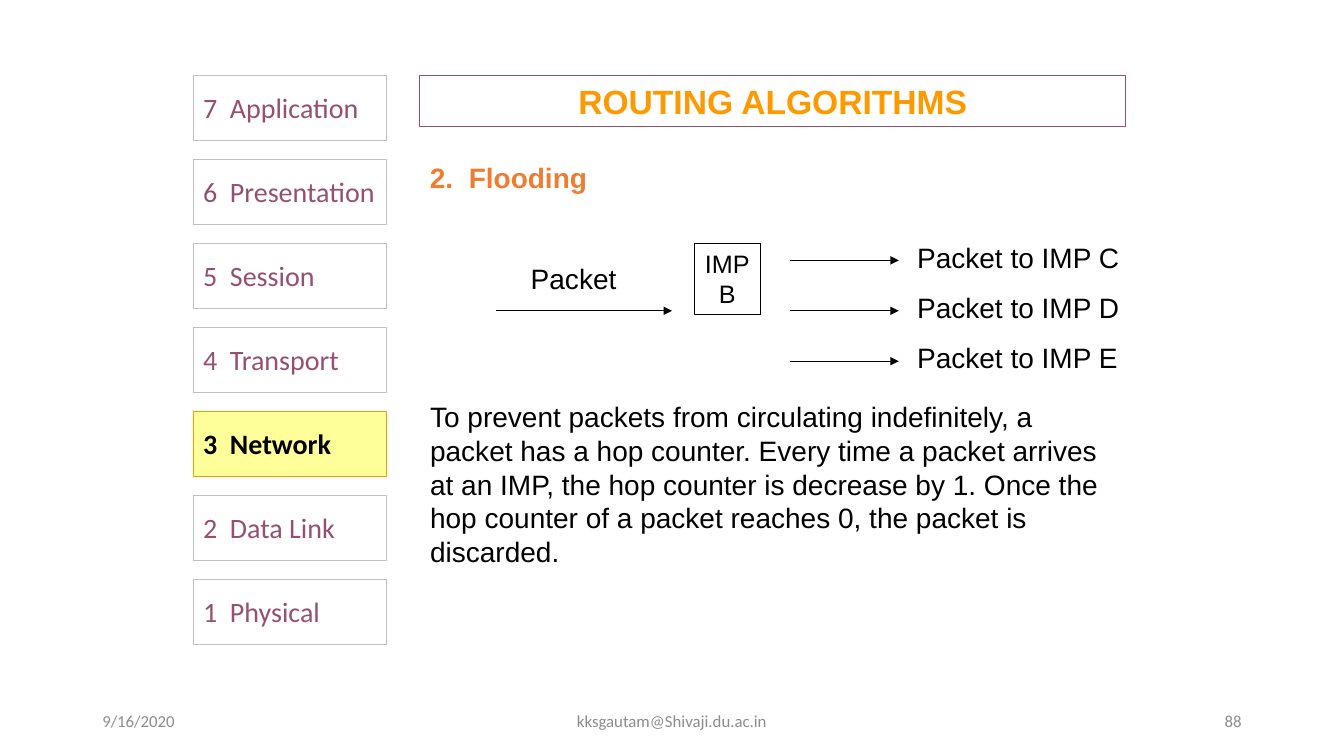
from dataclasses import dataclass
from lxml import etree
from pptx import Presentation
from pptx.dml.color import RGBColor
from pptx.enum.shapes import MSO_CONNECTOR, MSO_SHAPE
from pptx.enum.text import MSO_ANCHOR, MSO_AUTO_SIZE, PP_ALIGN
from pptx.oxml.ns import qn
from pptx.util import Pt

RECT = MSO_SHAPE.RECTANGLE
LINE = MSO_CONNECTOR.STRAIGHT
TOP, MID = MSO_ANCHOR.TOP, MSO_ANCHOR.MIDDLE
LEFT, MIDDLE, RIGHT = PP_ALIGN.LEFT, PP_ALIGN.CENTER, PP_ALIGN.RIGHT
FIXED = MSO_AUTO_SIZE.NONE


@dataclass(frozen=True)
class Theme:
    ink: str = "000000"
    plum: str = "954F72"
    gold: str = "FF9900"
    rust: str = "ED7D31"
    glow: str = "FFFF99"
    edge: str = "C0C0C0"
    gray: str = "8C8C8C"
    sans: str = "Arial"
    side: str = "Calibri"
    head: int = 24
    text: int = 20
    node: int = 18
    foot: int = 12
    rule: float = 0.75


THEME = Theme()
LAYERS = ["7  Application", "6  Presentation", "5  Session", "4  Transport",
          "3  Network", "2  Data Link", "1  Physical"]
ACTIVE = "3  Network"
HOPS = ["Packet to IMP C", "Packet to IMP D", "Packet to IMP E"]
NOTE = ("To prevent packets from circulating indefinitely, a packet has a hop "
        "counter. Every time a packet arrives at an IMP, the hop counter is "
        "decrease by 1. Once the hop counter of a packet reaches 0, the packet "
        "is discarded.")


def apply(target, values):
    for name, value in values.items():
        setattr(target, name, value)


def place(shape, box):
    apply(shape, dict(zip(("left", "top", "width", "height"), map(Pt, box))))


def write(shape, lines, size=THEME.text, color=THEME.ink, font=THEME.sans,
          bold=False, align=LEFT, anchor=TOP, wrap=True, pad=(7.2, 3.6)):
    frame = shape.text_frame
    frame.text = "\n".join(lines)
    side, top = map(Pt, pad)
    apply(frame, {"auto_size": FIXED, "word_wrap": wrap,
                  "vertical_anchor": anchor, "margin_left": side,
                  "margin_right": side, "margin_top": top,
                  "margin_bottom": Pt(3.6)})
    for para in frame.paragraphs:
        apply(para, {"alignment": align, "space_before": Pt(0),
                     "line_spacing": 1.0})
        for run in para.runs:
            apply(run.font, {"size": Pt(size), "name": font, "bold": bold})
            run.font.color.rgb = RGBColor.from_string(color)


def outline(shape, color, fill=None):
    shape.line.color.rgb = RGBColor.from_string(color)
    shape.line.width = Pt(THEME.rule)
    if fill:
        shape.fill.solid()
        shape.fill.fore_color.rgb = RGBColor.from_string(fill)
    else:
        shape.fill.background()


def panel(slide, box, lines, edge, fill=None, **style):
    shape = slide.shapes.add_shape(RECT, *map(Pt, box))
    shape.shadow.inherit = False
    outline(shape, edge, fill)
    write(shape, lines, **style)


def label(slide, box, text, **style):
    write(slide.shapes.add_textbox(*map(Pt, box)), [text], **style)


def arrow(slide, left, right, level):
    link = slide.shapes.add_connector(
        LINE, Pt(left), Pt(level), Pt(right), Pt(level))
    link.line.color.rgb = RGBColor.from_string(THEME.ink)
    link.line.width = Pt(THEME.rule)
    etree.SubElement(link.line._get_or_add_ln(), qn("a:tailEnd"),
                     type="triangle")
    etree.SubElement(link._element.spPr, qn("a:effectLst"))


def stack(slide, box):
    left, top, width, height = box
    tall = 46.4
    step = (height - tall) / (len(LAYERS) - 1)
    for row, name in enumerate(LAYERS):
        live = name == ACTIVE
        panel(slide, (left, top + row * step, width, tall), [name],
              THEME.gold if live else THEME.edge,
              THEME.glow if live else None,
              color=THEME.ink if live else THEME.plum,
              font=THEME.side, bold=live, pad=(7.2, 10.8))


def header(slide, box):
    left, top, width, _ = box
    title = slide.shapes.title
    place(title, (left, top, width, 36.7))
    outline(title, THEME.plum)
    write(title, ["ROUTING ALGORITHMS"], size=THEME.head, color=THEME.gold,
          bold=True, align=MIDDLE)
    label(slide, (left, top + 48, width, 50), "2.  Flooding",
          color=THEME.rust, bold=True, pad=(7.2, 12.8))


def flow(slide, box):
    left, top, _, _ = box
    step = 36
    label(slide, (left + 72, top + 15.6, 76, 31), "Packet", wrap=False)
    arrow(slide, left + 54, left + 180, top + 18 + step)
    panel(slide, (left + 196, top + 6, 47, 51), ["IMP", "B"], THEME.ink,
          size=THEME.node, align=MIDDLE, wrap=False)
    for row, hop in enumerate(HOPS):
        level = top + row * step
        arrow(slide, left + 264, left + 342, level + 18)
        label(slide, (left + 348, level, 158, 31), hop, wrap=False)


def body(slide, box):
    note = slide.placeholders[1]
    place(note, box)
    write(note, [NOTE])
    props = note.text_frame.paragraphs[0]._p.get_or_add_pPr()
    apply_none = {"marL": "0", "indent": "0"}
    for name, value in apply_none.items():
        props.set(name, value)
    etree.SubElement(props, qn("a:buNone"))


def footer(slide, box):
    left, top, width, height = box
    wing = 216
    parts = [("9/16/2020", left, wing, LEFT),
             ("kksgautam@Shivaji.du.ac.in", left + 252, width - 504, MIDDLE),
             ("88", left + width - wing, wing, RIGHT)]
    for text, start, span, align in parts:
        label(slide, (start, top, span, height), text, size=THEME.foot,
              color=THEME.gray, font=THEME.side, align=align, anchor=MID)


def main():
    deck = Presentation()
    apply(deck, {"slide_width": Pt(960), "slide_height": Pt(540)})
    slide = deck.slides.add_slide(deck.slide_layouts[1])
    stack(slide, (138, 54, 138, 406.4))
    header(slide, (300, 54, 504, 98))
    flow(slide, (300, 168, 506, 103))
    body(slide, (300, 282, 506, 127.4))
    footer(slide, (66, 500.4, 828, 28.8))
    deck.save("out.pptx")


if __name__ == "__main__":
    main()
